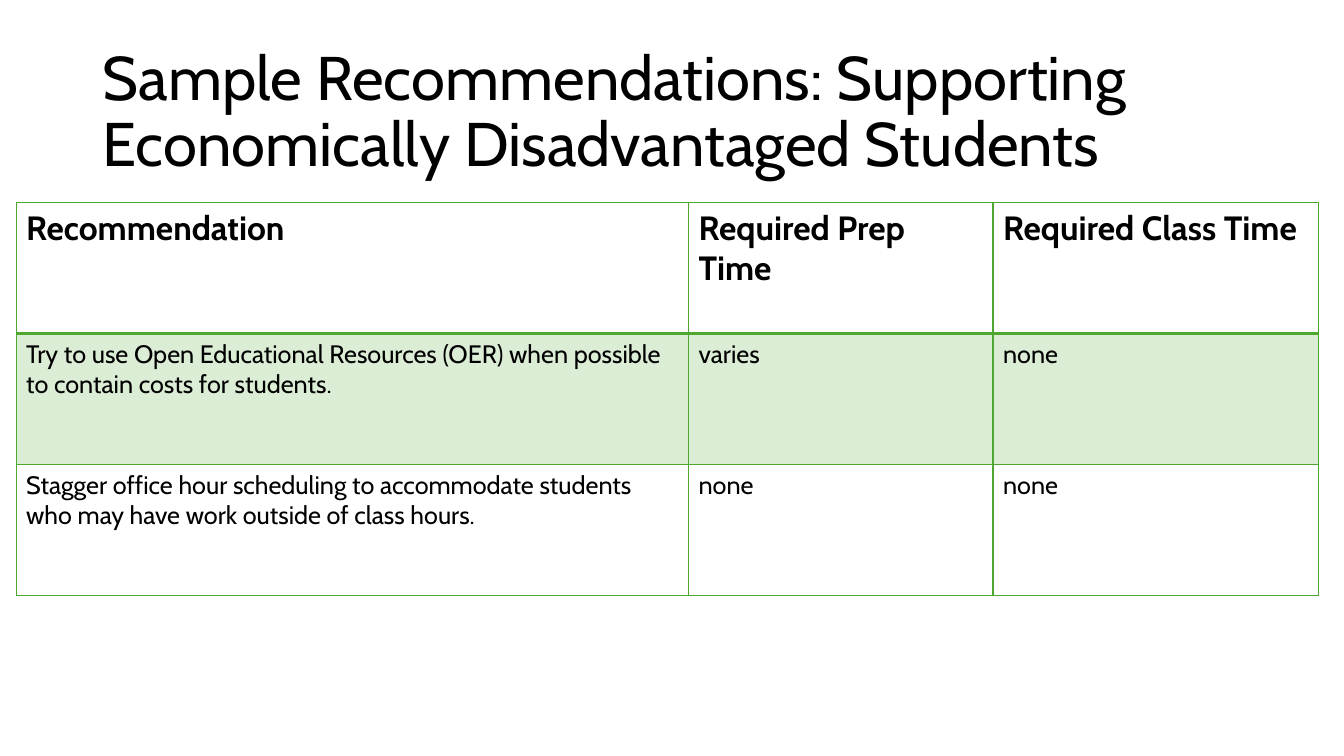
from lxml import etree
from pptx import Presentation
from pptx.dml.color import RGBColor
from pptx.enum.text import MSO_ANCHOR, MSO_AUTO_SIZE, PP_ALIGN
from pptx.oxml.ns import qn
from pptx.util import Inches, Pt

LEFT = PP_ALIGN.LEFT
MIDDLE = MSO_ANCHOR.MIDDLE
NO_FIT = MSO_AUTO_SIZE.NONE
FONT = "Cabin"
COLORS = {"text": "000000", "green": "4EA72E"}
COLS = [6.67, 3.02, 3.23]
ROW = 1.3
ROWS = [
    ["Recommendation", "Required Prep Time", "Required Class Time"],
    ["Try to use Open Educational Resources (OER) when possible "
     "to contain costs for students.", "varies", "none"],
    ["Stagger office hour scheduling to accommodate students "
     "who may have work outside of class hours.", "none", "none"],
]


def style(para, size, bold=False):
    para.alignment = LEFT
    para.font.name = FONT
    para.font.size = Pt(size)
    para.font.bold = bold
    para.font.color.rgb = RGBColor.from_string(COLORS["text"])


def border(cell, side, width):
    line = etree.SubElement(cell._tc.get_or_add_tcPr(), qn(f"a:ln{side}"),
                            w=str(Pt(width)))
    fill = etree.SubElement(line, qn("a:solidFill"))
    etree.SubElement(fill, qn("a:srgbClr"), val=COLORS["green"])


deck = Presentation()
deck.slide_width = Inches(13.33)
deck.slide_height = Inches(7.5)
slide = deck.slides.add_slide(deck.slide_layouts[5])

title = slide.shapes.title
title.left, title.top = Inches(0.92), Inches(0.4)
title.width, title.height = Inches(11.5), Inches(1.45)
frame = title.text_frame
frame.text = ("Sample Recommendations: Supporting "
              "Economically Disadvantaged Students")
frame.auto_size = NO_FIT
frame.word_wrap = True
frame.vertical_anchor = MIDDLE
head = frame.paragraphs[0]
style(head, 44)
head.line_spacing = 0.9

table = slide.shapes.add_table(
    len(ROWS), len(COLS), Inches(0.16), Inches(2.01),
    Inches(sum(COLS)), Inches(ROW * len(ROWS))).table
table.horz_banding = False
for col, width in zip(table.columns, COLS):
    col.width = Inches(width)

for r, texts in enumerate(ROWS):
    table.rows[r].height = Inches(ROW)
    for c, text in enumerate(texts):
        cell = table.cell(r, c)
        cell.text = text
        style(cell.text_frame.paragraphs[0], 24 if r == 0 else 18, r == 0)
        for side in "LRTB":
            thick = (r, side) in [(0, "B"), (1, "T")]
            border(cell, side, 2 if thick else 1)
        if r % 2:
            cell.fill.solid()
            cell.fill.fore_color.rgb = RGBColor.from_string(COLORS["green"])
            tint = cell._tc.tcPr.find(qn("a:solidFill")).find(qn("a:srgbClr"))
            etree.SubElement(tint, qn("a:alpha"), val="20000")
        else:
            cell.fill.background()

deck.save("out.pptx")
